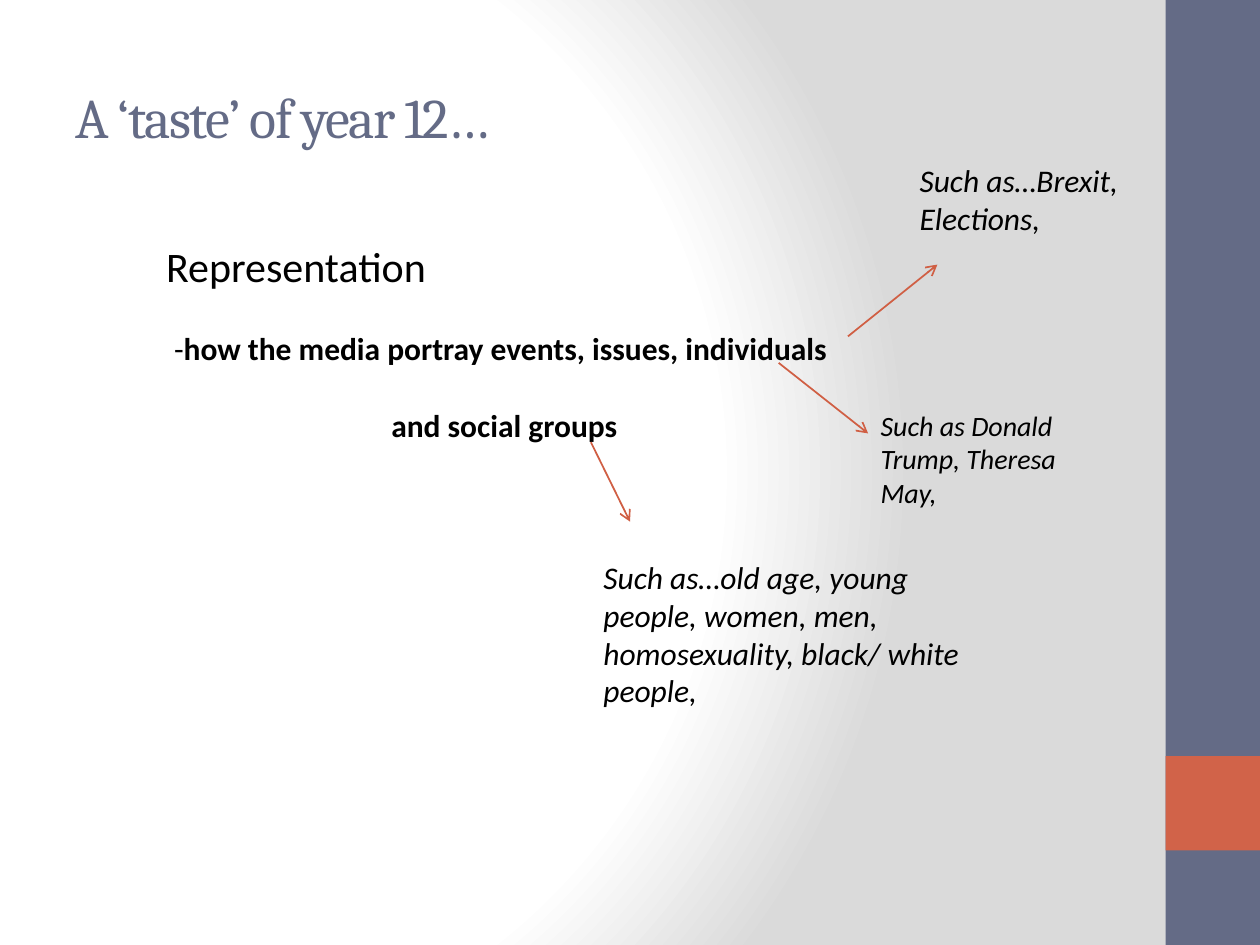
from lxml import etree
from pptx import Presentation
from pptx.dml.color import RGBColor
from pptx.enum.shapes import MSO_CONNECTOR, MSO_SHAPE
from pptx.enum.text import MSO_ANCHOR, PP_ALIGN
from pptx.oxml import parse_xml
from pptx.oxml.ns import nsdecls, qn
from pptx.util import Inches, Pt

SLATE = RGBColor(0x64, 0x6B, 0x86)
RUST = RGBColor(0xD1, 0x63, 0x49)
ARROW = RGBColor(0xD0, 0x5F, 0x44)
BLACK = RGBColor(0, 0, 0)
LEFT, CENTER = PP_ALIGN.LEFT, PP_ALIGN.CENTER
TOP, MIDDLE = MSO_ANCHOR.TOP, MSO_ANCHOR.MIDDLE
RECTANGLE, STRAIGHT = MSO_SHAPE.RECTANGLE, MSO_CONNECTOR.STRAIGHT

WIDTH, HEIGHT = 10, 7.5
BAND = 0.75
BACKGROUND_STOPS = [(0, "FFFFFF"), (75, "FFFFFF"), (100, "DADADA")]
BANDS = [
    ((WIDTH - BAND, 0, BAND, HEIGHT), SLATE),
    ((WIDTH - BAND, HEIGHT - 2 * BAND, BAND, BAND), RUST),
]

TITLE_FONT = {"name": "Cambria", "size": Pt(32)}
HEADING = {"name": "Calibri", "size": Pt(24)}
BODY = {"name": "Calibri", "size": Pt(18)}
BOLD = {**BODY, "bold": True}
EXAMPLE = {**BODY, "italic": True}
SMALL_EXAMPLE = {**EXAMPLE, "size": Pt(16)}

TITLE = ((0.5, 0.3, 8.33, 1.25), [(LEFT, [("A ‘taste’ of year 12…", TITLE_FONT)])])
TEXTS = [
    ((1.22, 1.86, 5.51, 2.02), [
        (LEFT, [("Representation", HEADING)]),
        (CENTER, [("-", BODY), ("how the media portray events, issues, individuals", BOLD)]),
        (CENTER, [(" and social groups", BOLD)]),
    ]),
    ((4.69, 4.38, 3.31, 1.31), [(LEFT, [(
        "Such as…old age, young people, women, men, homosexuality, black/ white people,",
        EXAMPLE)])]),
    ((6.89, 3.19, 2.05, 0.91), [(LEFT, [("Such as Donald Trump, Theresa May,", SMALL_EXAMPLE)])]),
    ((7.2, 1.23, 2.2, 0.71), [(LEFT, [("Such as…Brexit, Elections,", EXAMPLE)])]),
]
ARROWS = [
    (4.69, 3.51, 5, 4.14),
    (6.18, 2.88, 6.89, 3.44),
    (6.73, 2.67, 7.44, 2.1),
]


def inches(values):
    return [Inches(value) for value in values]


def add_background(slide):
    """Fill the slide with a circular gradient centred to the left."""
    stops = "".join(
        f'<a:gs pos="{share * 1000}"><a:srgbClr val="{color}"/></a:gs>'
        for share, color in BACKGROUND_STOPS)
    slide.element.cSld.insert(0, parse_xml(
        f'<p:bg {nsdecls("p", "a")}><p:bgPr><a:gradFill rotWithShape="1">'
        f'<a:gsLst>{stops}</a:gsLst><a:path path="circle">'
        '<a:fillToRect l="20000" t="50000" r="100000" b="50000"/></a:path>'
        '</a:gradFill><a:effectLst/></p:bgPr></p:bg>'))


def add_band(slide, place, color):
    band = slide.shapes.add_shape(RECTANGLE, *inches(place))
    band.shadow.inherit = False
    band.fill.solid()
    band.fill.fore_color.rgb = color
    band.line.fill.background()


def add_text(slide, place, paragraphs, color=BLACK, anchor=TOP):
    box = slide.shapes.add_textbox(*inches(place))
    frame = box.text_frame
    frame.word_wrap = True
    frame.vertical_anchor = anchor
    for index, (alignment, spans) in enumerate(paragraphs):
        para = frame.add_paragraph() if index else frame.paragraphs[0]
        para.alignment = alignment
        para.space_before = Pt(22 if index else 0)
        for text, font in spans:
            span = para.add_run()
            span.text = text
            span.font.color.rgb = color
            for name, value in font.items():
                setattr(span.font, name, value)
    return box


def add_arrow(slide, ends):
    arrow = slide.shapes.add_connector(STRAIGHT, *inches(ends))
    arrow.line.color.rgb = ARROW
    arrow.line.width = Pt(1)
    etree.SubElement(arrow.line._get_or_add_ln(), qn("a:tailEnd"), type="arrow")
    etree.SubElement(arrow.element.spPr, qn("a:effectLst"))


def main():
    deck = Presentation()
    deck.slide_width, deck.slide_height = inches((WIDTH, HEIGHT))
    slide = deck.slides.add_slide(deck.slide_layouts[6])
    add_background(slide)
    for place, color in BANDS:
        add_band(slide, place, color)
    title = add_text(slide, *TITLE, color=SLATE, anchor=MIDDLE)
    for properties in title.element.iter(qn("a:rPr")):
        properties.set("spc", "-100")
    for place, paragraphs in TEXTS:
        add_text(slide, place, paragraphs)
    for ends in ARROWS:
        add_arrow(slide, ends)
    deck.save("out.pptx")


if __name__ == "__main__":
    main()
